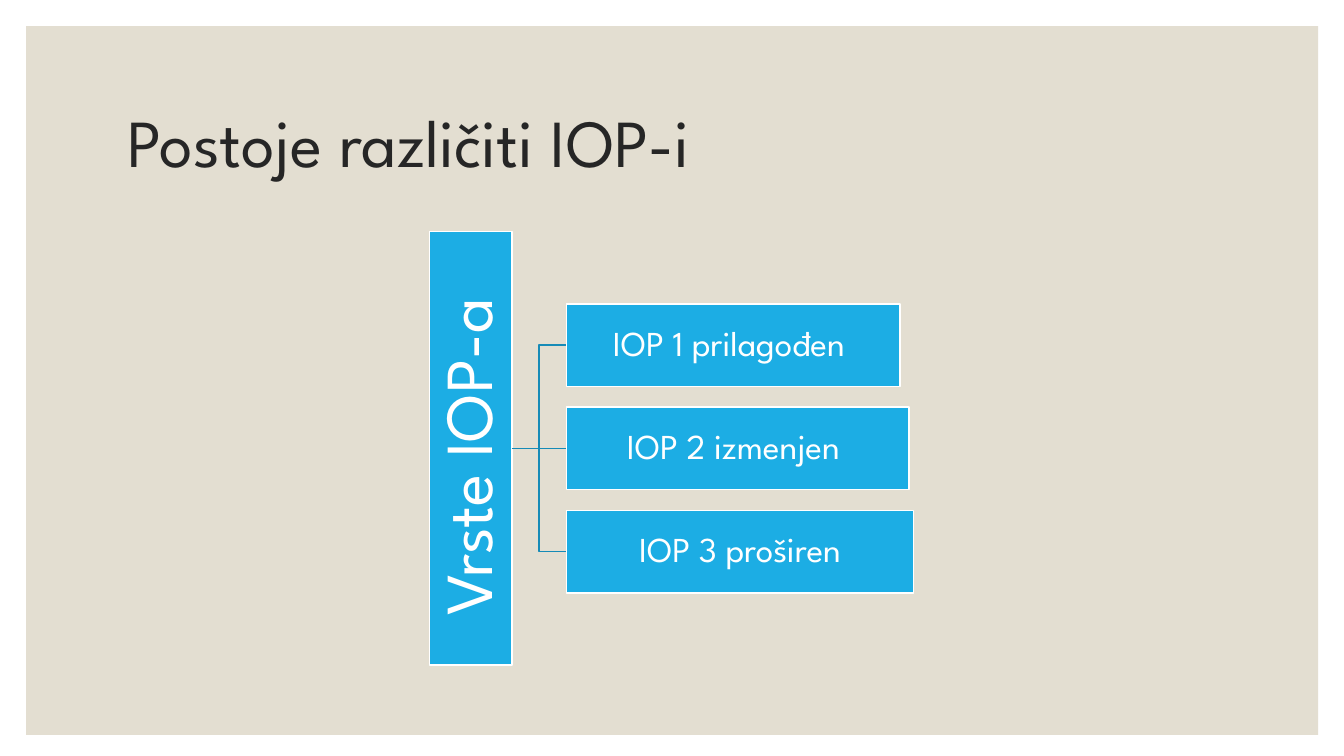
import pptx
import pptx.util
import pptx.dml.color
import pptx.enum.shapes
import pptx.enum.text
import pptx.oxml
import pptx.oxml.ns

Cm, Pt = pptx.util.Cm, pptx.util.Pt
RGB = pptx.dml.color.RGBColor.from_string
Kind = pptx.enum.shapes.MSO_SHAPE
Link = pptx.enum.shapes.MSO_CONNECTOR
Align = pptx.enum.text.PP_ALIGN
Anchor = pptx.enum.text.MSO_ANCHOR

theme = {
    "font": "League Spartan",
    "panel": "E3DED1", "ink": "262626", "box": "1CADE4",
    "white": "FFFFFF", "link": "168BB7",
    "big": 48, "small": 25, "line": 1,
}


def write(shape, text, size, color, align, inset):
    frame = shape.text_frame
    form = {"word_wrap": True, "vertical_anchor": Anchor.MIDDLE}
    for side in ("left", "right", "top", "bottom"):
        form["margin_" + side] = Cm(inset)
    for key, value in form.items():
        setattr(frame, key, value)
    para = frame.paragraphs[0]
    para.alignment, para.line_spacing = align, 0.9
    run = para.add_run()
    run.text = text
    for key, value in {"name": theme["font"], "size": Pt(size)}.items():
        setattr(run.font, key, value)
    run.font.color.rgb = RGB(color)


def block(left, top, width, height, fill, line=None):
    shape = slide.shapes.add_shape(
        Kind.RECTANGLE, Cm(left), Cm(top), Cm(width), Cm(height))
    shape.shadow.inherit = False
    shape.fill.solid()
    shape.fill.fore_color.rgb = RGB(fill)
    if line:
        shape.line.color.rgb = RGB(line)
        shape.line.width = Pt(theme["line"])
    else:
        shape.line.fill.background()
    return shape


deck = pptx.Presentation()
deck.slide_width, deck.slide_height = Cm(33.87), Cm(19.05)
slide = deck.slides.add_slide(deck.slide_layouts[6])

# Panel and title
block(0.66, 0.66, 32.56, 17.86, theme["panel"])
title = slide.shapes.add_textbox(Cm(2.97), Cm(1.78), Cm(27.94), Cm(3.81))
write(title, "Postoje različiti IOP-i", theme["big"], theme["ink"],
      Align.LEFT, 0.25)

# Root, turned to read upwards
long, thick = 10.92, 2.08
mid_x, mid_y = 11.86, 11.3
root = block(mid_x - long / 2, mid_y - thick / 2, long, thick,
             theme["box"], theme["white"])
root.rotation = 270
write(root, "Vrste IOP-a ", theme["big"], theme["white"], Align.CENTER, 0.08)

# Kinds, each linked to the root
left, pitch = 14.27, 2.6
kinds = [("IOP 1 prilagođen ", 8.41), ("IOP 2 izmenjen ", 8.64),
         ("IOP 3 proširen", 8.76)]
for row, (text, width) in enumerate(kinds, -1):
    top = mid_y + row * pitch - thick / 2
    box = block(left, top, width, thick, theme["box"], theme["white"])
    write(box, text, theme["small"], theme["white"], Align.CENTER, 0.05)

    link = slide.shapes.add_connector(
        Link.ELBOW if row else Link.STRAIGHT, 0, 0, 0, 0)
    link.begin_connect(root, 2)
    # The turned root has its bottom side on the right
    link.begin_x, link.begin_y = Cm(mid_x + thick / 2), Cm(mid_y)
    link.end_connect(box, 1)
    link.line.color.rgb = RGB(theme["link"])
    link.line.width = Pt(theme["line"])
    link._element.spPr.append(
        pptx.oxml.parse_xml("<a:effectLst %s/>" % pptx.oxml.ns.nsdecls("a")))

deck.save("out.pptx")
